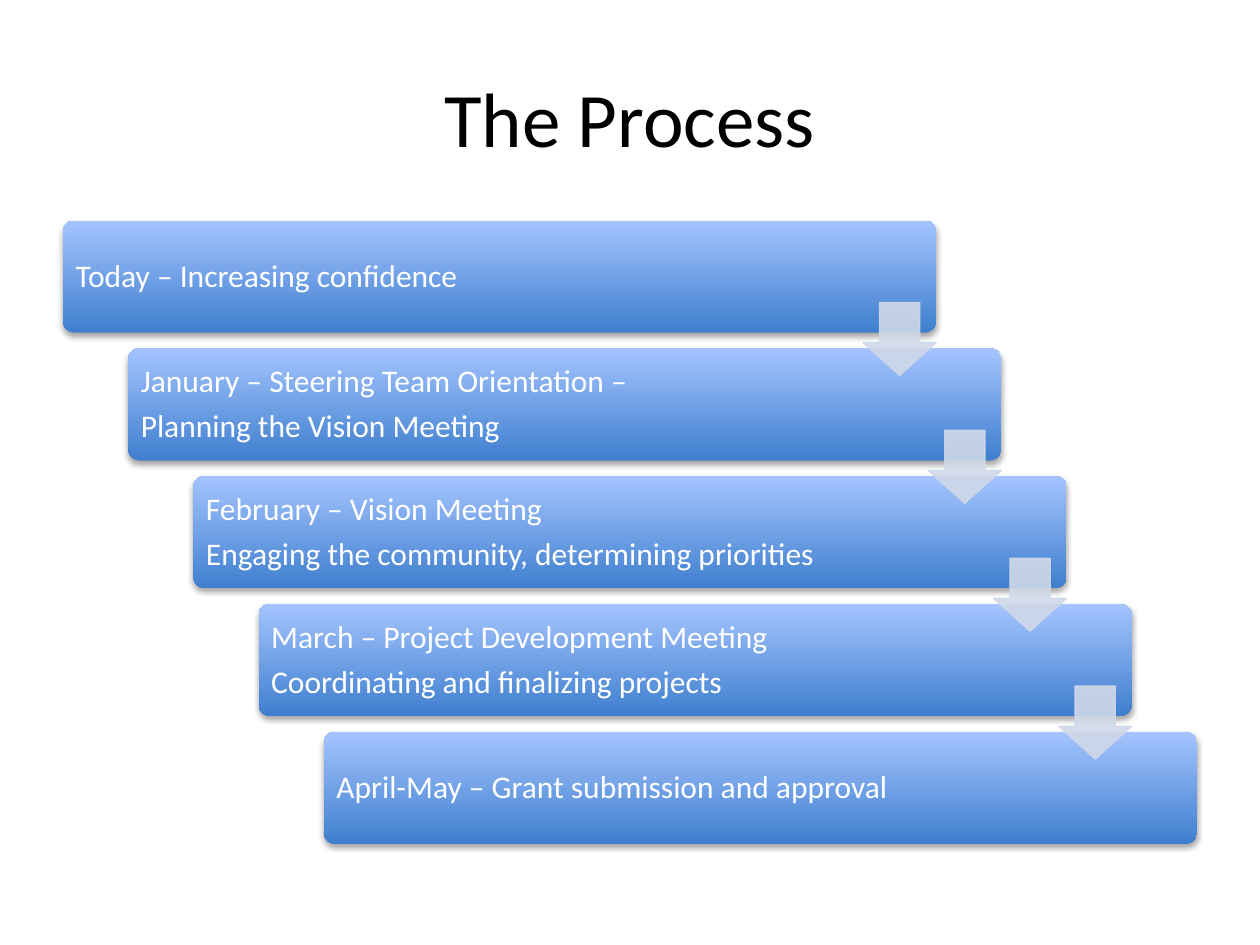
from pptx import Presentation
from pptx.dml.color import RGBColor
from pptx.enum.shapes import MSO_SHAPE as Shape
from pptx.enum.text import MSO_ANCHOR as Anchor, PP_ALIGN as Align
from pptx.oxml import parse_xml
from pptx.oxml.ns import nsdecls, qn
from pptx.util import Inches, Pt

BLACK = RGBColor(0x00, 0x00, 0x00)
WHITE = RGBColor(0xFF, 0xFF, 0xFF)
DEEP = RGBColor(0x3F, 0x7F, 0xCE)
LIGHT = RGBColor(0xA4, 0xC4, 0xFF)
PALE = RGBColor(0xD0, 0xD8, 0xE8)

STEPS = [
    ["Today – Increasing confidence"],
    ["January – Steering Team Orientation –", "Planning the Vision Meeting"],
    ["February – Vision Meeting",
     "Engaging the community, determining priorities"],
    ["March – Project Development Meeting",
     "Coordinating and finalizing projects"],
    ["April-May – Grant submission and approval"],
]
CARD_W, CARD_H = 6.93, 0.89
ARROW = 0.58


def add_text(slide, box, lines, size, color, align=Align.LEFT,
             inset=0.07, spacing=1.0, after=0):
    frame = slide.shapes.add_textbox(*map(Inches, box)).text_frame
    frame.word_wrap = True
    frame.vertical_anchor = Anchor.MIDDLE
    frame.margin_left = frame.margin_right = Inches(inset)
    frame.margin_top = frame.margin_bottom = Inches(inset)
    for i, line in enumerate(lines):
        para = frame.paragraphs[0] if i == 0 else frame.add_paragraph()
        para.alignment = align
        para.line_spacing = spacing
        para.space_after = Pt(after)
        run = para.add_run()
        run.text = line
        run.font.name = "Calibri"
        run.font.size = Pt(size)
        run.font.color.rgb = color


def add_shadow(shape):
    """Give the shape a soft shadow that falls straight down."""
    shape.shadow.inherit = False
    effects = shape._element.spPr.find(qn("a:effectLst"))
    effects.append(parse_xml(
        f'<a:outerShdw {nsdecls("a")} blurRad="{Pt(3.1)}" dist="{Pt(1.8)}" '
        'dir="5400000" rotWithShape="0"><a:srgbClr val="000000">'
        '<a:alpha val="35000"/></a:srgbClr></a:outerShdw>'))


def add_card(slide, left, top, lines):
    card = slide.shapes.add_shape(
        Shape.ROUNDED_RECTANGLE, *map(Inches, (left, top, CARD_W, CARD_H)))
    card.adjustments[0] = 0.1
    card.fill.gradient()
    card.fill.gradient_angle = 90
    for stop, color in zip(card.fill.gradient_stops, (DEEP, LIGHT)):
        stop.color.rgb = color
    card.line.fill.background()
    add_shadow(card)
    add_text(slide, (left + 0.03, top + 0.03, 5.8, CARD_H - 0.05), lines,
             size=18, color=WHITE, spacing=0.9, after=6.3)


def add_arrow(slide, left, top):
    arrow = slide.shapes.add_shape(
        Shape.DOWN_ARROW, *map(Inches, (left, top, ARROW, ARROW)))
    arrow.adjustments[0] = 0.55
    arrow.adjustments[1] = 0.45
    arrow.shadow.inherit = False
    arrow.line.width = Pt(0.75)
    for fill in (arrow.fill, arrow.line.fill):
        fill.solid()
        fill.fore_color.rgb = PALE
    for color in arrow._element.spPr.iter(qn("a:srgbClr")):
        color.append(parse_xml(f'<a:alpha {nsdecls("a")} val="90000"/>'))


def add_stairs(slide, left, top, width, height):
    """Step the cards down the box, with an arrow from each to the next."""
    last = len(STEPS) - 1
    dx = (width - CARD_W) / last
    dy = (height - CARD_H) / last
    spots = [(left + i * dx, top + i * dy) for i in range(len(STEPS))]
    for (x, y), lines in zip(spots, STEPS):
        add_card(slide, x, y, lines)
    for x, y in spots[:-1]:
        add_arrow(slide, x + CARD_W - ARROW, y + 0.65)


def main():
    deck = Presentation()
    deck.slide_width, deck.slide_height = Inches(10), Inches(7.5)
    slide = deck.slides.add_slide(deck.slide_layouts[6])
    add_text(slide, (0.5, 0.3, 9, 1.25), ["The Process"], size=44,
             color=BLACK, align=Align.CENTER, inset=0.05)
    add_stairs(slide, 0.5, 1.75, 9, 4.95)
    deck.save("out.pptx")


if __name__ == "__main__":
    main()
